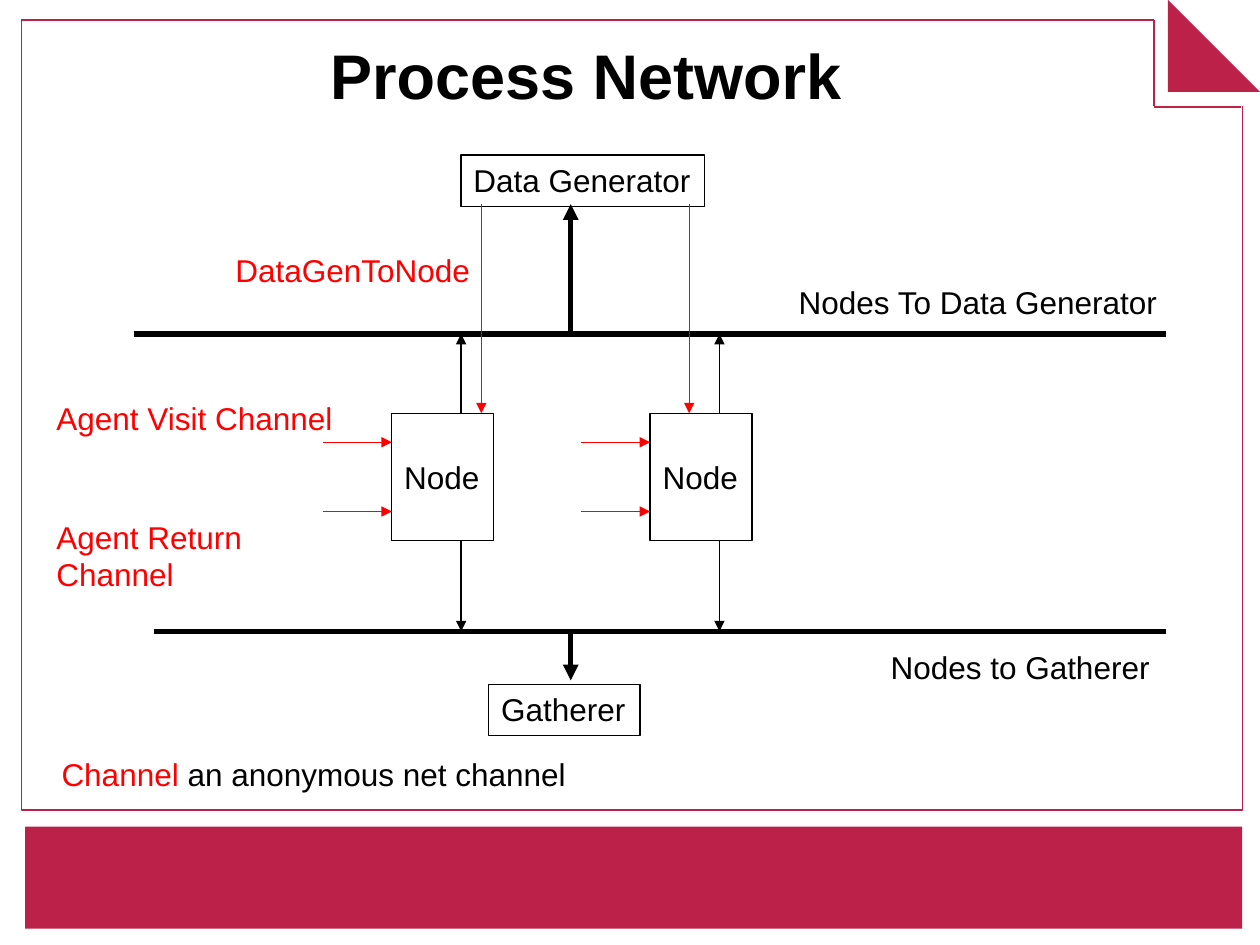
from lxml import etree
from pptx import Presentation
from pptx import util as u
from pptx.dml.color import RGBColor
from pptx.enum import shapes, text
from pptx.oxml.ns import qn

COLORS = {"ink": "000000", "red": "FF0000", "brand": "BC2149", "paper": "FFFFFF"}
COLS, ROWS = 100, 75  # grid over the slide


class Deck:
    font, size, thin, thick = "Arial", 18, 0.75, 3

    def __init__(self):
        self.prs = Presentation()
        self.prs.slide_width, self.prs.slide_height = u.Inches(10), u.Inches(7.5)
        self.slide = self.prs.slides.add_slide(self.prs.slide_layouts[6])

    def x(self, col):
        return round(self.prs.slide_width * col / COLS)

    def y(self, row):
        return round(self.prs.slide_height * row / ROWS)

    def area(self, col, row, wide, high):
        return self.x(col), self.y(row), self.x(wide), self.y(high)

    def color(self, name):
        return RGBColor.from_string(COLORS[name])

    def box(self, *area, fill=None, line=None, kind=shapes.MSO_SHAPE.RECTANGLE):
        shape = self.slide.shapes.add_shape(kind, *self.area(*area))
        shape.shadow.inherit = False
        if fill:
            shape.fill.solid()
            shape.fill.fore_color.rgb = self.color(fill)
        else:
            shape.fill.background()
        if line:
            shape.line.color.rgb = self.color(line)
            shape.line.width = u.Pt(self.thin)
        else:
            shape.line.fill.background()
        return shape

    def words(self, shape, *runs, size=size, bold=False, center=False, middle=False):
        """Fill a shape with one paragraph of (words, color) runs."""
        frame = shape.text_frame
        frame.word_wrap = False
        frame.vertical_anchor = (
            text.MSO_ANCHOR.MIDDLE if middle else text.MSO_ANCHOR.TOP)
        para = frame.paragraphs[0]
        para.alignment = text.PP_ALIGN.CENTER if center else text.PP_ALIGN.LEFT
        para.font.name, para.font.size, para.font.bold = self.font, u.Pt(size), bold
        for words, color in runs:
            run = para.add_run()
            run.text = words
            run.font.color.rgb = self.color(color)

    def label(self, area, *runs, **style):
        self.words(self.slide.shapes.add_textbox(*self.area(*area)), *runs, **style)

    def block(self, area, words, **style):
        self.words(self.box(*area, line="ink"), (words, "ink"), **style)

    def line(self, x1, y1, x2, y2, color="ink", width=thin, arrow=False):
        link = self.slide.shapes.add_connector(
            shapes.MSO_CONNECTOR.STRAIGHT,
            self.x(x1), self.y(y1), self.x(x2), self.y(y2))
        link.line.color.rgb = self.color(color)
        link.line.width = u.Pt(width)
        props = link._element.spPr
        if arrow:
            etree.SubElement(props.find(qn("a:ln")), qn("a:tailEnd"), type="triangle")
        etree.SubElement(props, qn("a:effectLst"))


def main():
    deck = Deck()

    # Frame, folded corner and footer band
    deck.box(1.7, 1.6, 96.9, 62.7, fill="paper", line="brand")
    deck.box(91.6, 0, 8.4, 8.4, fill="paper")
    deck.box(92.7, 0, 7.3, 7.3, fill="brand", kind=shapes.MSO_SHAPE.RIGHT_TRIANGLE)
    deck.box(2, 65.6, 96.6, 8.1, fill="brand")
    deck.line(91.6, 1.6, 91.6, 8.4, "brand")
    deck.line(91.6, 8.5, 98.5, 8.5, "brand")

    # Title
    deck.label((2, 2.1, 89, 7.6), ("Process Network", "ink"),
               size=36, bold=True, center=True, middle=True)

    # Generator and gatherer, each with its bus
    top, low, mid, end = 26.5, 50.1, 45.3, 92.5
    deck.block((36.6, 12.3, 19.3, 4.1), "Data Generator")
    deck.block((38.8, 54.3, 12, 4.1), "Gatherer")
    for start, bus, tip in ((10.6, top, 16.2), (12.2, low, 54)):
        deck.line(start, bus, end, bus, width=deck.thick)
        deck.line(mid, bus, mid, tip, width=deck.thick, arrow=True)

    # Nodes with their channels
    head, foot = 32.8, 42.9
    for left, feed in ((31.1, 38.2), (51.6, 54.7)):
        deck.block((left, head, 8.1, foot - head), "Node", middle=True)
        port = left + 5.5
        deck.line(port, head, port, top, arrow=True)
        deck.line(port, foot, port, low, arrow=True)
        deck.line(feed, 16.2, feed, head, "red", arrow=True)
        for row in (35.1, 40.6):
            deck.line(left - 5.5, row, left, row, "red", arrow=True)

    # Labels
    for col, row, wide, words, color in (
        (62.4, 22, 30.8, "Nodes To Data Generator", "ink"),
        (69.7, 50.9, 22.6, "Nodes to Gatherer", "ink"),
        (3.5, 31.2, 24, "Agent Visit Channel", "red"),
        (3.5, 40.6, 26.7, "Agent Return Channel", "red"),
        (17.7, 19.4, 20.9, "DataGenToNode", "red"),
    ):
        deck.label((col, row, wide, 4), (words, color))

    # Legend
    deck.label((3.9, 59.4, 42.4, 4),
               ("Channel", "red"), (" an anonymous net channel", "ink"))

    deck.prs.save("out.pptx")


if __name__ == "__main__":
    main()
